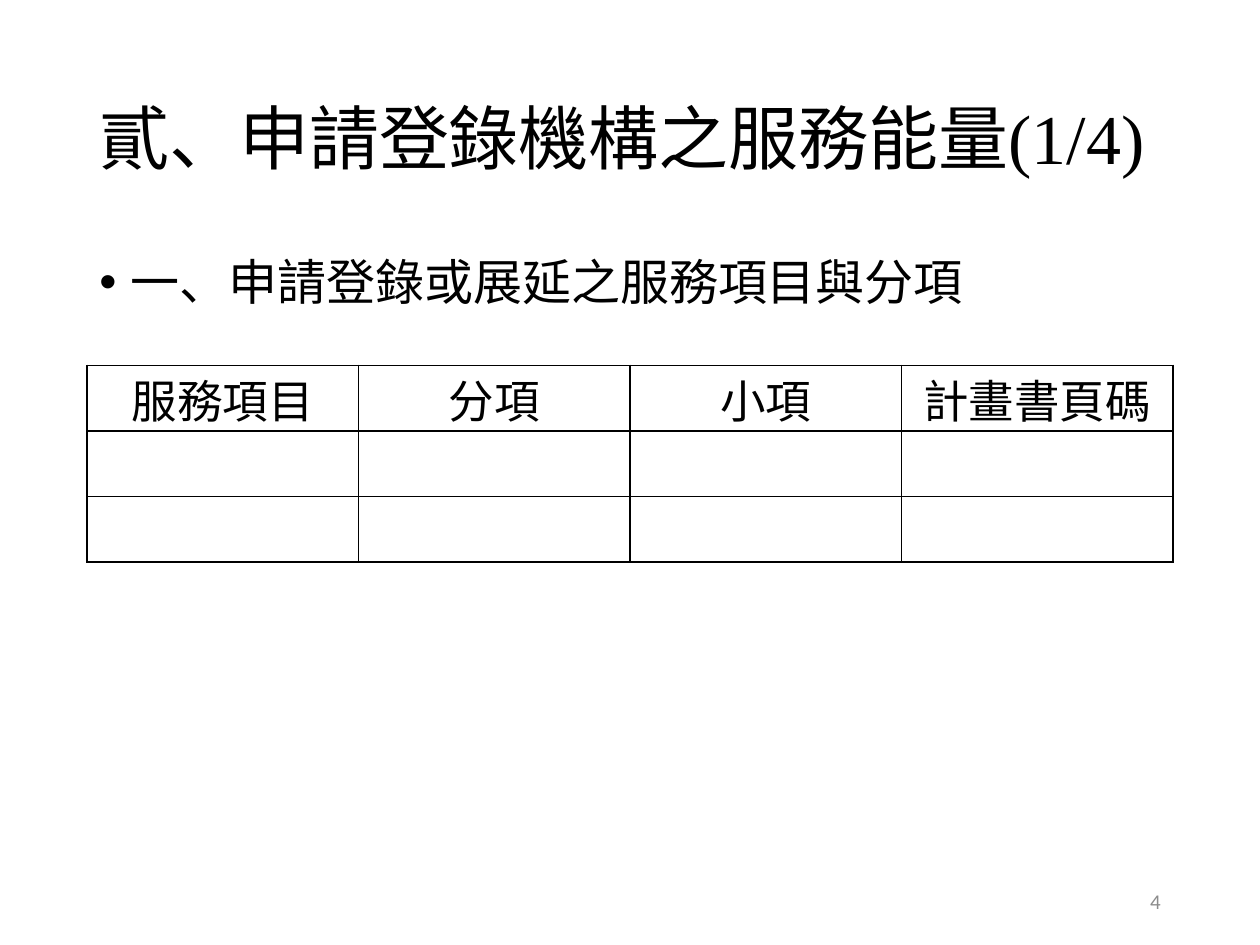
from lxml import etree
from pptx import Presentation
from pptx.dml.color import RGBColor
from pptx.enum.text import MSO_ANCHOR, PP_ALIGN
from pptx.oxml.ns import qn
from pptx.util import Inches, Pt

MIDDLE, TOP = MSO_ANCHOR.MIDDLE, MSO_ANCHOR.TOP
LEFT, RIGHT, CENTER, JUSTIFY = (
    PP_ALIGN.LEFT, PP_ALIGN.RIGHT, PP_ALIGN.CENTER, PP_ALIGN.JUSTIFY)
SERIF, SANS, CJK = "Times New Roman", "Calibri", "Noto Sans CJK SC"
BLACK, GREY = "000000", "8C8C8C"

TITLE = "貳、申請登錄機構之服務能量(1/4)"
ITEM = "一、申請登錄或展延之服務項目與分項"
HEADS = ["服務項目", "分項", "小項", "計畫書頁碼"]
PAGE = "4"

WIDE, HIGH = 10, 7.5
EDGE = 0.69
SPAN = WIDE - 2 * EDGE
ROWS, ROW_H = 3, 0.52


def rgb(code):
    return RGBColor.from_string(code)


def style(para, text, size, face, color, align):
    para.text = text
    para.alignment = align
    font = para.font
    font.size, font.name = Pt(size), face
    font.color.rgb = rgb(color)
    props = para._p.pPr.find(qn("a:defRPr"))
    etree.SubElement(props, qn("a:ea"), typeface=CJK)


def add_text(slide, box, anchor, *look):
    frame = slide.shapes.add_textbox(*map(Inches, box)).text_frame
    frame.word_wrap = True
    frame.vertical_anchor = anchor
    para = frame.paragraphs[0]
    style(para, *look)
    return para


def add_bullet(para, indent):
    props = para._p.pPr
    props.set("marL", str(Inches(indent)))
    props.set("indent", str(-Inches(indent)))
    last = props.find(qn("a:defRPr"))
    for tag, key, value in (("a:buFont", "typeface", "Arial"),
                            ("a:buChar", "char", "•")):
        mark = etree.Element(qn(tag))
        mark.set(key, value)
        last.addprevious(mark)


def add_border(cell, color, width):
    props = cell._tc.get_or_add_tcPr()
    for place, side in enumerate("LRTB"):
        line = etree.Element(qn("a:ln" + side), w=str(Pt(width)))
        fill = etree.SubElement(line, qn("a:solidFill"))
        etree.SubElement(fill, qn("a:srgbClr"), val=color)
        props.insert(place, line)


def add_grid(slide):
    box = map(Inches, (EDGE, 2.9, SPAN, ROWS * ROW_H))
    table = slide.shapes.add_table(ROWS, len(HEADS), *box).table
    table.first_row = table.horz_banding = False
    for cell in table.iter_cells():
        cell.fill.background()
        cell.margin_left = cell.margin_right = Inches(0.06)
        cell.margin_top = cell.margin_bottom = 0
        add_border(cell, BLACK, 1)
    for cell, head in zip(table.rows[0].cells, HEADS):
        para = cell.text_frame.paragraphs[0]
        style(para, head, 26, CJK, BLACK, CENTER)
        para.space_after = Pt(6)


def main():
    deck = Presentation()
    deck.slide_width, deck.slide_height = Inches(WIDE), Inches(HIGH)
    slide = deck.slides.add_slide(deck.slide_layouts[6])

    title = add_text(slide, (EDGE, 0.4, SPAN, 1.45), MIDDLE,
                     TITLE, 40, SERIF, BLACK, LEFT)
    title.line_spacing = 0.9

    item = add_text(slide, (EDGE, 2, SPAN, 4.76), TOP,
                    ITEM, 28, SERIF, BLACK, JUSTIFY)
    item.line_spacing = 0.9
    item.space_before = Pt(10)
    add_bullet(item, 0.25)

    add_grid(slide)
    add_text(slide, (WIDE - EDGE - 2.25, 6.95, 2.25, 0.4), MIDDLE,
             PAGE, 12, SANS, GREY, RIGHT)
    deck.save("out.pptx")


if __name__ == "__main__":
    main()
